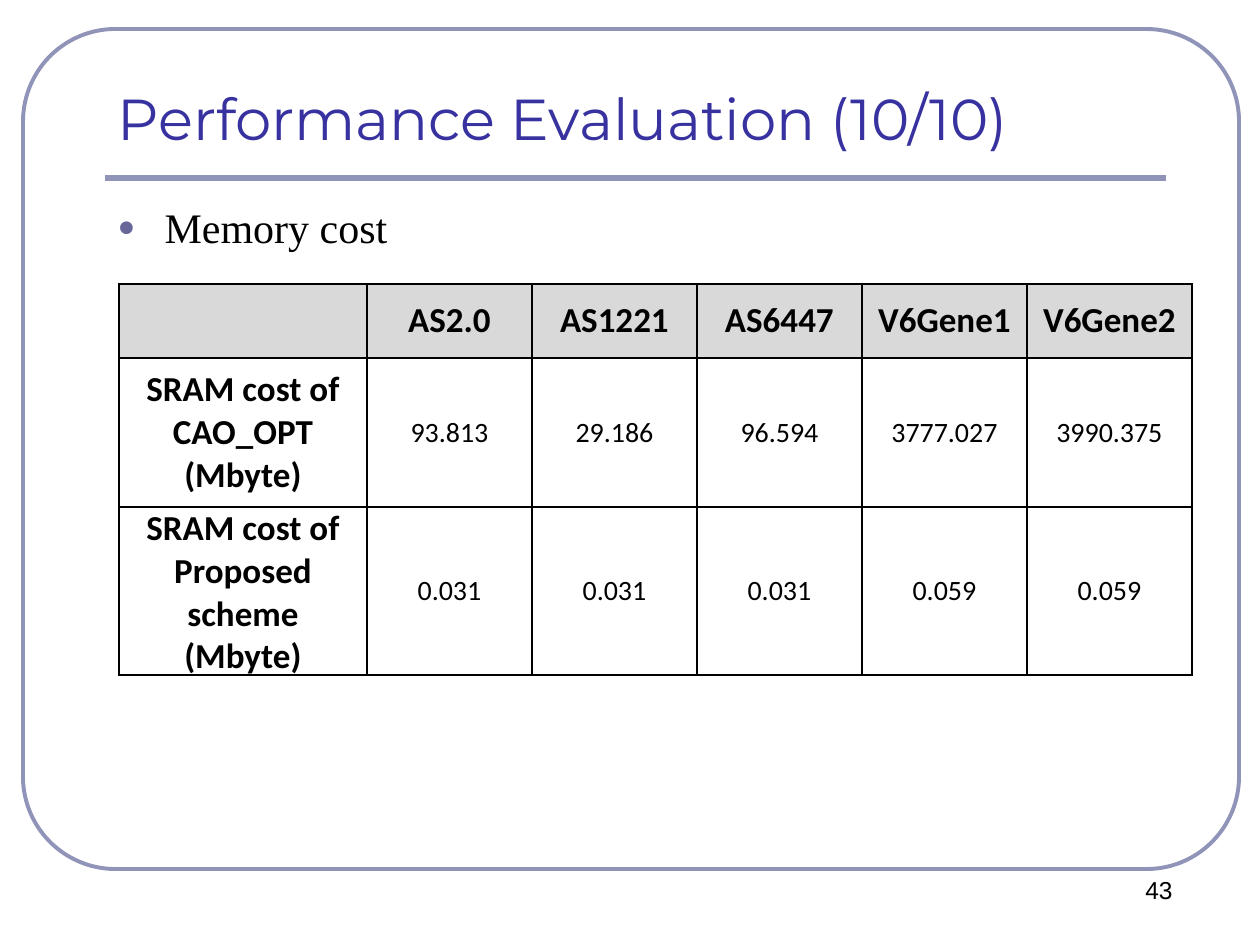
from dataclasses import dataclass

from lxml.etree import SubElement
from pptx import Presentation
from pptx.dml.color import RGBColor as RGB
from pptx.enum.shapes import MSO_CONNECTOR as LINE, MSO_SHAPE as SHAPE
from pptx.enum.text import MSO_ANCHOR as ANCHOR, PP_ALIGN as ALIGN
from pptx.oxml import parse_xml
from pptx.oxml.ns import nsdecls, qn
from pptx.util import Emu, Pt

SCALE = 914400 / 126


def px(n):
    return Emu(round(n * SCALE))


def put(obj, vals):
    for key, val in vals.items():
        setattr(obj, key, val)


@dataclass(frozen=True)
class Theme:
    frame: str = "9094B8"
    title: str = "3732A0"
    text: str = "000000"
    dot: str = "666699"
    head: str = "D9D9D9"
    cell: str = "FFFFFF"
    big: int = 33
    list: int = 24
    label: int = 20
    value: int = 16
    page: int = 14


class Deck:
    """Holds the theme and the current slide."""

    def __init__(self, theme):
        self.theme = theme
        self.prs = Presentation()
        put(self.prs, {"slide_width": px(1260), "slide_height": px(945)})
        self.slide = self.prs.slides.add_slide(self.prs.slide_layouts[1])
        self.shapes = self.slide.shapes

    def place(self, shape, box):
        put(shape, dict(zip(("left", "top", "width", "height"), map(px, box))))

    def label(self, para, text, face, size, color, bold=False, align=ALIGN.LEFT):
        para.alignment = align
        run = para.add_run()
        run.text = text
        put(run.font, {"name": face, "size": Pt(size), "bold": bold})
        run.font.color.rgb = RGB.from_string(color)

    def stroke(self, shape, width):
        shape.line.color.rgb = RGB.from_string(self.theme.frame)
        shape.line.width = Pt(width)

    def frame(self, box, bend):
        shape = self.shapes.add_shape(SHAPE.ROUNDED_RECTANGLE, *map(px, box))
        shape.adjustments[0] = bend
        shape.shadow.inherit = False
        shape.fill.background()
        self.stroke(shape, 2.25)

    def rule(self, start, end):
        line = self.shapes.add_connector(LINE.STRAIGHT, *map(px, start + end))
        SubElement(line._element.spPr, qn("a:effectLst"))
        self.stroke(line, 3)

    def title(self, text, box):
        shape = self.shapes.title
        self.place(shape, box)
        frame = shape.text_frame
        frame.vertical_anchor = ANCHOR.BOTTOM
        self.label(frame.paragraphs[0], text, "Montserrat",
                   self.theme.big, self.theme.title)

    def bullets(self, items, box):
        shape = self.slide.placeholders[1]
        self.place(shape, box)
        frame = shape.text_frame
        for i, item in enumerate(items):
            para = frame.add_paragraph() if i else frame.paragraphs[0]
            self.label(para, item, "Times New Roman", self.theme.list, self.theme.text)
            props = para._p.get_or_add_pPr()
            for key, val in {"marL": px(47), "indent": -px(47)}.items():
                props.set(key, str(val))
            color = SubElement(props, qn("a:buClr"))
            SubElement(color, qn("a:srgbClr"), val=self.theme.dot)
            SubElement(props, qn("a:buSzPct"), val="70000")
            SubElement(props, qn("a:buFont"), typeface="Arial")
            SubElement(props, qn("a:buChar"), char="●")

    def number(self, text, box):
        frame = self.shapes.add_textbox(*map(px, box)).text_frame
        frame.word_wrap = True
        self.label(frame.paragraphs[0], text, "Arial", self.theme.page,
                   self.theme.text, align=ALIGN.CENTER)

    def border(self, cell):
        props = cell._tc.get_or_add_tcPr()
        for i, side in enumerate("LRTB"):
            props.insert(i, parse_xml(
                f'<a:ln{side} {nsdecls("a")} w="{Pt(1)}"><a:solidFill>'
                f'<a:srgbClr val="{self.theme.text}"/></a:solidFill></a:ln{side}>'))

    def table(self, rows, spot, widths, heights):
        box = (*spot, sum(widths), sum(heights))
        grid = self.shapes.add_table(len(rows), len(widths), *map(px, box)).table
        for col, width in zip(grid.columns, widths):
            col.width = px(width)
        for row, height in zip(grid.rows, heights):
            row.height = px(height)
        theme = self.theme
        for r, row in enumerate(rows):
            for c, text in enumerate(row):
                cell = grid.cell(r, c)
                head = r == 0 or c == 0
                put(cell, {"vertical_anchor": ANCHOR.MIDDLE,
                           "margin_left": px(10), "margin_right": px(10),
                           "margin_top": 0, "margin_bottom": 0})
                cell.fill.solid()
                cell.fill.fore_color.rgb = RGB.from_string(theme.cell if r else theme.head)
                self.border(cell)
                if text:
                    self.label(cell.text_frame.paragraphs[0], text, "Calibri",
                               theme.label if head else theme.value,
                               theme.text, head, ALIGN.CENTER)


def main():
    deck = Deck(Theme())
    deck.frame((23, 29, 1216, 840), 0.11)
    deck.rule((105, 178), (1166, 178))
    deck.title("Performance Evaluation (10/10)", (105, 76, 1061, 82))
    deck.bullets(["Memory cost"], (105, 195, 1046, 624))
    deck.number("43", (1091, 869, 136, 63))
    costs = [
        ("", "AS2.0", "AS1221", "AS6447", "V6Gene1", "V6Gene2"),
        ("SRAM cost of CAO_OPT (Mbyte)",
         "93.813", "29.186", "96.594", "3777.027", "3990.375"),
        ("SRAM cost of Proposed scheme (Mbyte)",
         "0.031", "0.031", "0.031", "0.059", "0.059"),
    ]
    deck.table(costs, (119, 284), [248] + [165] * 5, [74, 149, 149])
    deck.prs.save("out.pptx")


if __name__ == "__main__":
    main()
